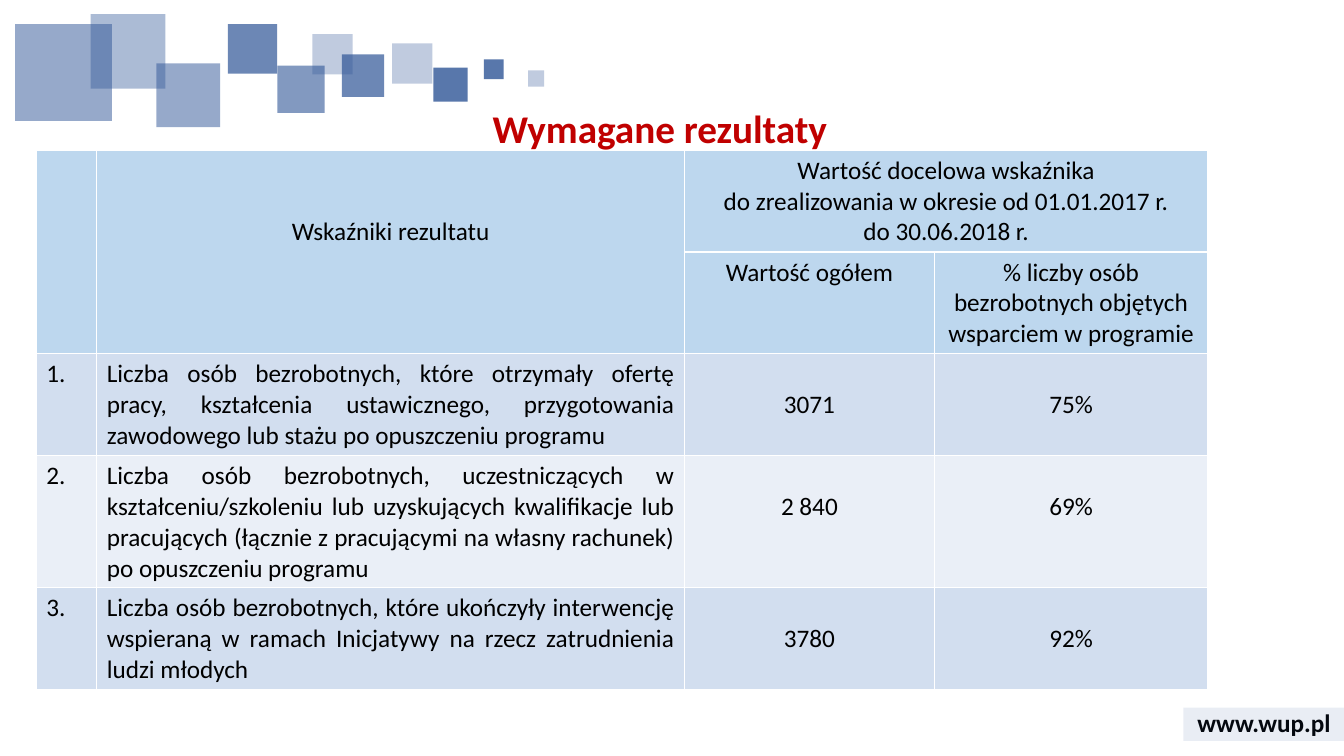
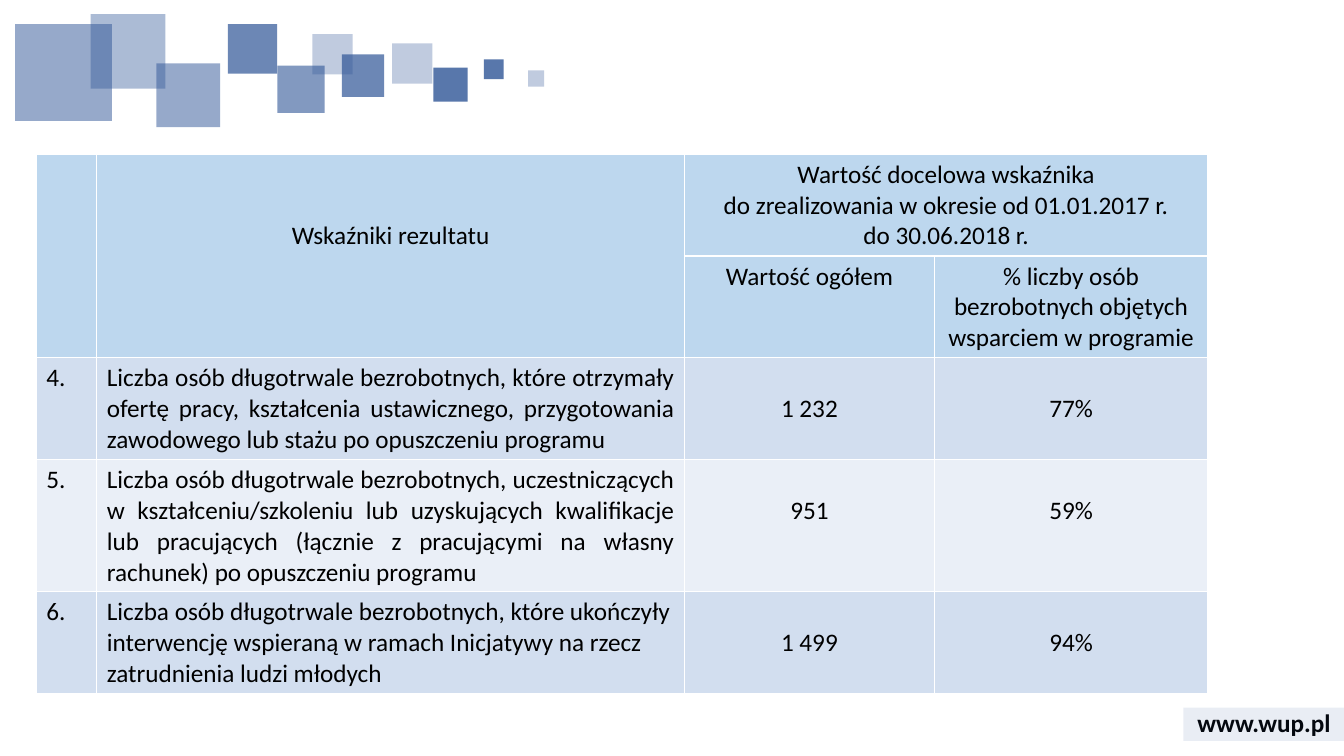
import dataclasses

import pptx
import pptx.dml.color
import pptx.enum.shapes
import pptx.enum.text
import pptx.oxml.ns
import pptx.util
from lxml import etree

ALIGN = pptx.enum.text.PP_ALIGN
RECTANGLE = pptx.enum.shapes.MSO_SHAPE.RECTANGLE
qn = pptx.oxml.ns.qn


@dataclasses.dataclass(frozen=True)
class Theme:
    font: str = "Calibri"
    title_size: int = 28
    text_size: int = 18
    line_height: float = 1.22
    border_width: int = 1
    white: str = "FFFFFF"
    ink: str = "000000"
    title: str = "C00000"
    accent: str = "2F5597"
    header: str = "BDD7EE"
    bands: tuple = ("D2DEEF", "EAEFF7")


MOSAIC = [
    (29.18, 5.73, 3, 30),
    (32.25, 8.93, 2.55, 80),
    (25.43, 7.2, 3.15, 70),
    (1.13, 3.2, 7.2, 50),
    (20.63, 8.67, 3.53, 60),
    (11.63, 8.4, 4.75, 50),
    (6.75, 1.87, 5.55, 40),
    (36, 7.87, 1.47, 80),
    (16.95, 3.2, 3.68, 70),
    (23.25, 4.53, 3, 30),
    (39.3, 9.33, 1.2, 30),
]
COLUMNS = [4.5, 43.73, 18.6, 20.33]
ROWS = [13.47, 13.47, 13.47, 17.47, 13.47]
TABLE_LEFT = 2.7
HEADINGS = [
    (0, 1, "Wskaźniki rezultatu", 2),
    (0, 2, "Wartość docelowa wskaźnika\vdo zrealizowania w okresie od 01.01.2017 r.\vdo 30.06.2018 r.", 0),
    (1, 2, "Wartość ogółem", 0),
    (1, 3, "% liczby osób bezrobotnych objętych wsparciem w programie", 0),
]
GENERAL_RESULTS = [
    ("1.", "Liczba osób bezrobotnych, które otrzymały ofertę pracy, kształcenia ustawicznego, "
     "przygotowania zawodowego lub stażu po opuszczeniu programu", "3071", "75%"),
    ("2.", "Liczba osób bezrobotnych, uczestniczących w kształceniu/szkoleniu lub uzyskujących "
     "kwalifikacje lub pracujących (łącznie z pracującymi na własny rachunek) po opuszczeniu programu",
     "2 840", "69%"),
    ("3.", "Liczba osób bezrobotnych, które ukończyły interwencję wspieraną w ramach Inicjatywy "
     "na rzecz zatrudnienia ludzi młodych", "3780", "92%"),
]
LONG_TERM_RESULTS = [
    ("4.", "Liczba osób długotrwale bezrobotnych, które otrzymały ofertę pracy, kształcenia "
     "ustawicznego, przygotowania zawodowego lub stażu po opuszczeniu programu", "1 232", "77%"),
    ("5.", "Liczba osób długotrwale bezrobotnych, uczestniczących w kształceniu/szkoleniu lub "
     "uzyskujących kwalifikacje lub pracujących (łącznie z pracującymi na własny rachunek) "
     "po opuszczeniu programu", "951", "59%"),
    ("6.", "Liczba osób długotrwale bezrobotnych, które ukończyły interwencję wspieraną w ramach "
     "Inicjatywy na rzecz zatrudnienia ludzi młodych", "1 499", "94%"),
]


class Deck:
    def __init__(self, theme):
        self.theme = theme
        self.presentation = pptx.Presentation()
        self.presentation.slide_width = pptx.util.Inches(13.33)
        self.presentation.slide_height = pptx.util.Inches(7.5)
        self.slide = None

    def across(self, percent):
        return pptx.util.Emu(round(self.presentation.slide_width * percent / 100))

    def down(self, percent):
        return pptx.util.Emu(round(self.presentation.slide_height * percent / 100))

    def area(self, left, top, width, height):
        return self.across(left), self.down(top), self.across(width), self.down(height)

    def color(self, value):
        return pptx.dml.color.RGBColor.from_string(value)

    def start_slide(self, title=None):
        layout = self.presentation.slide_layouts[5 if title else 6]
        self.slide = self.presentation.slides.add_slide(layout)
        self.mosaic()
        self.footer("www.wup.pl")
        if title:
            self.title(title)

    def set_text(self, frame, text, align, size=None, color=None, bold=False):
        paragraph = frame.paragraphs[0]
        paragraph.text = text
        paragraph.alignment = align
        for run in paragraph.runs:
            run.font.name = self.theme.font
            run.font.size = pptx.util.Pt(size or self.theme.text_size)
            run.font.color.rgb = self.color(color or self.theme.ink)
            run.font.bold = bold
        return paragraph

    def tint(self, shapes, area, opacity):
        tile = shapes.add_shape(RECTANGLE, *area)
        tile.shadow.inherit = False
        tile.line.fill.background()
        tile.fill.solid()
        tile.fill.fore_color.rgb = self.color(self.theme.accent)
        shade = tile.element.spPr.find(".//" + qn("a:srgbClr"))
        etree.SubElement(shade, qn("a:alpha"), val=str(opacity * 1000))

    def mosaic(self):
        tiles = self.slide.shapes.add_group_shape().shapes
        for left, top, side, opacity in MOSAIC:
            edge = self.across(side)
            self.tint(tiles, (self.across(left), self.down(top), edge, edge), opacity)

    def footer(self, address):
        frame = self.slide.shapes.add_textbox(*self.area(88.05, 92.93, 12, 5.33)).text_frame
        frame.word_wrap = True
        frame.vertical_anchor = pptx.enum.text.MSO_ANCHOR.MIDDLE
        self.set_text(frame, address, ALIGN.CENTER, bold=True)
        self.tint(self.slide.shapes, self.area(88.05, 93.6, 12, 4.4), 10)

    def title(self, text):
        heading = self.slide.shapes.title
        heading.left, heading.top, heading.width, heading.height = self.area(2.55, 13.07, 93.08, 8.4)
        frame = heading.text_frame
        frame.auto_size = pptx.enum.text.MSO_AUTO_SIZE.NONE
        frame.vertical_anchor = pptx.enum.text.MSO_ANCHOR.MIDDLE
        paragraph = self.set_text(frame, text, ALIGN.CENTER, self.theme.title_size, self.theme.title, True)
        paragraph.line_spacing = 0.9

    def paint(self, cell, fill):
        properties = cell._tc.get_or_add_tcPr()
        width = str(pptx.util.Pt(self.theme.border_width))
        for side in ("a:lnL", "a:lnR", "a:lnT", "a:lnB"):
            border = etree.SubElement(properties, qn(side), w=width)
            solid = etree.SubElement(border, qn("a:solidFill"))
            etree.SubElement(solid, qn("a:srgbClr"), val=self.theme.white)
        cell.fill.solid()
        cell.fill.fore_color.rgb = self.color(fill)

    def fill_cell(self, cell, text, align, lines_down=0):
        self.set_text(cell.text_frame, text, align)
        offset = lines_down * self.theme.text_size * self.theme.line_height
        cell.margin_top = pptx.util.Inches(0.05) + pptx.util.Pt(offset)

    def results_table(self, top, results, last_align=ALIGN.JUSTIFY):
        area = self.area(TABLE_LEFT, top, sum(COLUMNS), sum(ROWS))
        table = self.slide.shapes.add_table(len(ROWS), len(COLUMNS), *area).table
        table.first_row = table.horz_banding = False
        for column, width in zip(table.columns, COLUMNS):
            column.width = self.across(width)
        for index, (row, height) in enumerate(zip(table.rows, ROWS)):
            row.height = self.down(height)
            fill = self.theme.header if index < 2 else self.theme.bands[index % 2]
            for cell in row.cells:
                self.paint(cell, fill)
        for start, end in (((0, 0), (1, 0)), ((0, 1), (1, 1)), ((0, 2), (0, 3))):
            table.cell(*start).merge(table.cell(*end))
        for row, column, text, lines_down in HEADINGS:
            self.fill_cell(table.cell(row, column), text, ALIGN.CENTER, lines_down)
        for row, (number, indicator, total, share) in enumerate(results, 2):
            align = last_align if row == len(ROWS) - 1 else ALIGN.JUSTIFY
            self.fill_cell(table.cell(row, 0), number, ALIGN.LEFT)
            self.fill_cell(table.cell(row, 1), indicator, align)
            self.fill_cell(table.cell(row, 2), total, ALIGN.CENTER, 1)
            self.fill_cell(table.cell(row, 3), share, ALIGN.CENTER, 1)


def main():
    deck = Deck(Theme())
    deck.start_slide("Wymagane rezultaty")
    deck.results_table(19.87, GENERAL_RESULTS)
    deck.start_slide()
    deck.results_table(20.4, LONG_TERM_RESULTS, ALIGN.LEFT)
    deck.presentation.save("out.pptx")


if __name__ == "__main__":
    main()
